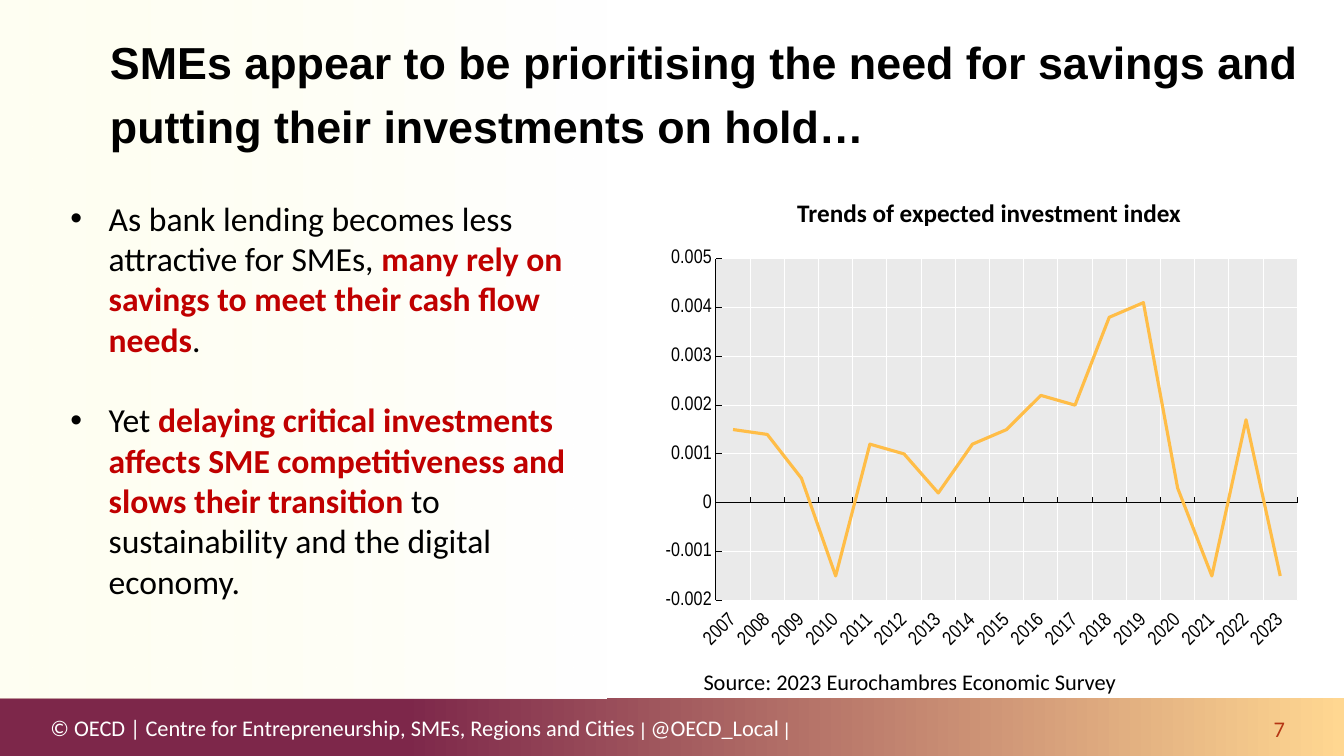
"""Build the slide on SME savings and investment trends."""
import lxml.etree
import pptx
import pptx.chart.data
import pptx.dml.color
import pptx.enum.chart
import pptx.enum.shapes
import pptx.enum.text
import pptx.oxml
import pptx.oxml.ns
import pptx.util

RGBColor = pptx.dml.color.RGBColor
BLACK = RGBColor(0x00, 0x00, 0x00)
WHITE = RGBColor(0xFF, 0xFF, 0xFF)
RED = RGBColor(0xC0, 0x00, 0x00)
RUST = RGBColor(0xB5, 0x35, 0x13)
SAND = RGBColor(0xFF, 0xD7, 0x91)
PLUM = RGBColor(0x7D, 0x27, 0x4A)
IVORY = RGBColor(0xFF, 0xFF, 0xE7)
AMBER = RGBColor(0xFF, 0xBD, 0x47)
PLOT_GREY = RGBColor(0xEA, 0xEA, 0xEA)

ALIGN = pptx.enum.text.PP_ALIGN
ANCHOR = pptx.enum.text.MSO_ANCHOR
TICK = pptx.enum.chart.XL_TICK_MARK
qualified = pptx.oxml.ns.qn

INVESTMENT_INDEX = [0.0015, 0.0014, 0.0005, -0.0015, 0.0012, 0.001, 0.0002, 0.0012, 0.0015,
                    0.0022, 0.002, 0.0038, 0.0041, 0.0003, -0.0015, 0.0017, -0.0015]
YEARS = [str(2007 + offset) for offset in range(len(INVESTMENT_INDEX))]


def style_font(font, size=16, name="Calibri", color=BLACK, bold=False):
    """Set size, typeface, colour and weight of a font."""
    font.size = pptx.util.Pt(size)
    font.name = name
    font.bold = bold
    font.color.rgb = color


def write(paragraph, text, **style):
    """Add a formatted run of text to a paragraph."""
    run = paragraph.add_run()
    run.text = text
    style_font(run.font, **style)


class SlideBuilder:
    """Place styled elements on one slide, in percent of its width and height."""

    def __init__(self, presentation):
        """Add a title-only slide."""
        self.width = presentation.slide_width
        self.height = presentation.slide_height
        self.slide = presentation.slides.add_slide(presentation.slide_layouts[5])

    def box(self, left, top, width, height):
        """Turn percentages into slide lengths."""
        return (int(left * self.width / 100), int(top * self.height / 100),
                int(width * self.width / 100), int(height * self.height / 100))

    def gradient(self, box, right_color, left_color, end=1.0, opacity=None):
        """Add a rectangle that fades from right to left."""
        shape = self.slide.shapes.add_shape(
            pptx.enum.shapes.MSO_SHAPE.RECTANGLE, *self.box(*box))
        shape.shadow.inherit = False
        shape.line.fill.background()
        shape.fill.gradient()
        shape.fill.gradient_angle = 180
        stops = shape.fill.gradient_stops
        for stop, color, position in zip(stops, (right_color, left_color), (0, end)):
            stop.color.rgb = color
            stop.position = position
        if opacity is not None:
            color_element = shape.element.findall(".//" + qualified("a:srgbClr"))[-1]
            lxml.etree.SubElement(color_element, qualified("a:alpha"),
                                  val=str(int(opacity * 100000)))

    def title(self, box, text):
        """Move the title in front of the background and fill it."""
        title = self.slide.shapes.title
        title.element.getparent().append(title.element)
        title.left, title.top, title.width, title.height = self.box(*box)
        frame = title.text_frame
        frame.word_wrap = True
        frame.auto_size = pptx.enum.text.MSO_AUTO_SIZE.NONE
        frame.vertical_anchor = ANCHOR.TOP
        paragraph = frame.paragraphs[0]
        paragraph.alignment = ALIGN.LEFT
        paragraph.line_spacing = pptx.util.Pt(45.3)
        write(paragraph, text, size=32, name="Arial", bold=True)

    def text(self, box, paragraphs, align=ALIGN.LEFT, anchor=ANCHOR.TOP,
             margin=0.1, bullet=False, gap=0):
        """Add a text box from paragraphs, each a list of (text, style) runs."""
        frame = self.slide.shapes.add_textbox(*self.box(*box)).text_frame
        frame.word_wrap = True
        frame.vertical_anchor = anchor
        frame.margin_left = pptx.util.Inches(margin)
        for index, runs in enumerate(paragraphs):
            paragraph = frame.add_paragraph() if index else frame.paragraphs[0]
            paragraph.alignment = align
            if index:
                paragraph.space_before = pptx.util.Pt(gap)
            if bullet:
                properties = paragraph._p.get_or_add_pPr()
                indent = pptx.util.Inches(0.38)
                properties.set("marL", str(indent))
                properties.set("indent", str(-indent))
                lxml.etree.SubElement(properties, qualified("a:buFont"), typeface="Arial")
                lxml.etree.SubElement(properties, qualified("a:buChar"), char="•")
            for text, style in runs:
                write(paragraph, text, **style)

    def line_chart(self, box, categories, values):
        """Add the line chart on a grey plot area."""
        data = pptx.chart.data.CategoryChartData(number_format="General")
        data.categories = categories
        data.add_series("Series 1", values)
        chart = self.slide.shapes.add_chart(
            pptx.enum.chart.XL_CHART_TYPE.LINE, *self.box(*box), data).chart
        chart.has_legend = False
        chart.has_title = False
        style_font(chart.font, size=10)
        chart.plots[0].vary_by_categories = False
        series = chart.plots[0].series[0]
        series.smooth = False
        series.marker.style = pptx.enum.chart.XL_MARKER_STYLE.NONE
        series.format.line.color.rgb = AMBER
        series.format.line.width = pptx.util.Pt(2.25)
        for axis in (chart.category_axis, chart.value_axis):
            self.axis(axis)
        chart.category_axis.tick_label_position = pptx.enum.chart.XL_TICK_LABEL_POSITION.LOW
        chart.value_axis.minimum_scale = -0.002
        chart.value_axis.maximum_scale = 0.005
        chart.value_axis.major_unit = 0.001
        label_body = chart.element.xpath(".//c:catAx/c:txPr/a:bodyPr")[0]
        label_body.set("rot", "-2700000")
        label_body.set("vert", "horz")
        self.plot_area(chart.element.xpath(".//c:plotArea")[0])

    def axis(self, axis):
        """Format labels, line, ticks and gridlines of an axis."""
        style_font(axis.tick_labels.font, size=14, name="Arial Narrow")
        axis.major_tick_mark = TICK.INSIDE
        axis.minor_tick_mark = TICK.NONE
        axis.has_major_gridlines = True
        for line, color in ((axis.format.line, BLACK),
                            (axis.major_gridlines.format.line, WHITE)):
            line.color.rgb = color
            line.width = pptx.util.Pt(0.75)

    def plot_area(self, plot_area):
        """Fix the inner plot position and fill it."""
        for layout in plot_area.findall(qualified("c:layout")):
            plot_area.remove(layout)
        layout = lxml.etree.Element(qualified("c:layout"))
        manual = lxml.etree.SubElement(layout, qualified("c:manualLayout"))
        settings = {"layoutTarget": "inner", "xMode": "edge", "yMode": "edge",
                    "x": 0.099, "y": 0.071, "w": 0.89, "h": 0.811}
        for tag, value in settings.items():
            lxml.etree.SubElement(manual, qualified("c:" + tag), val=str(value))
        plot_area.insert(0, layout)
        properties = lxml.etree.SubElement(plot_area, qualified("c:spPr"))
        fill = lxml.etree.SubElement(properties, qualified("a:solidFill"))
        lxml.etree.SubElement(fill, qualified("a:srgbClr"), val=str(PLOT_GREY))


def main():
    """Build and save the presentation."""
    presentation = pptx.Presentation()
    presentation.slide_width = pptx.util.Inches(13.33)
    presentation.slide_height = pptx.util.Inches(7.5)
    builder = SlideBuilder(presentation)
    builder.gradient((0, 92.4, 100, 7.6), SAND, PLUM, end=0.7)
    builder.gradient((0, 0, 45.16, 92.4), WHITE, IVORY, opacity=0.5)

    footer = {"color": WHITE}
    divider = {"color": WHITE, "size": 13.3, "name": "Arial"}
    builder.text((2.78, 94.4, 70, 3.6), [[
        ("© OECD | Centre for Entrepreneurship, SMEs, Regions and Cities", footer),
        (" | ", divider), ("@OECD_Local", footer), (" |", divider)]],
        anchor=ANCHOR.MIDDLE, margin=0.13)
    builder.title((7.43, 2.67, 92.57, 18.93),
                  "SMEs appear to be prioritising the need for savings and "
                  "putting their investments on hold…")
    builder.text((93.32, 94.53, 3.75, 3.6), [[("7", {"color": RUST})]],
                 align=ALIGN.CENTER, anchor=ANCHOR.MIDDLE)
    builder.line_chart((48.46, 30.27, 48.61, 55.73), YEARS, INVESTMENT_INDEX)
    builder.text((50.04, 25.47, 47.11, 5.33),
                 [[("Trends of expected investment index", {"size": 18, "bold": True})]],
                 align=ALIGN.CENTER)
    builder.text((51.61, 87.73, 43.89, 4.93),
                 [[("Source: 2023 Eurochambres Economic Survey", {})]])
    plain = {"size": 24}
    strong = {"size": 24, "color": RED, "bold": True}
    builder.text((4.5, 25.47, 40.96, 56), [
        [("As bank lending becomes less attractive for SMEs, ", plain),
         ("many rely on savings to meet their cash flow needs", strong), (".", plain)],
        [("Yet ", plain),
         ("delaying critical investments affects SME competitiveness and slows "
          "their transition ", strong),
         ("to sustainability and the digital economy.", plain)]],
        bullet=True, gap=29)
    presentation.save("out.pptx")


if __name__ == "__main__":
    main()
